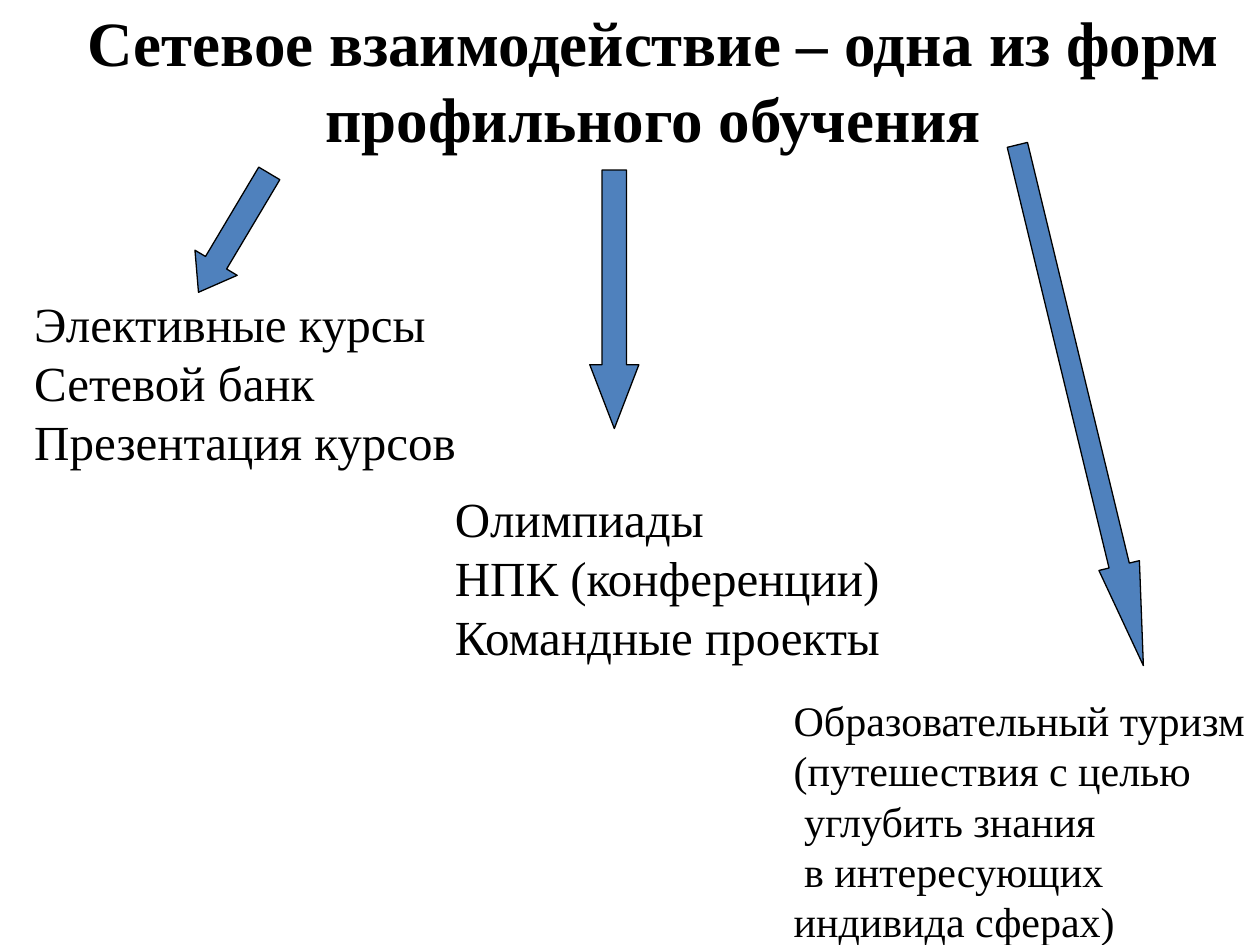
from lxml import etree
from pptx import Presentation
from pptx.dml.color import RGBColor
from pptx.enum.shapes import MSO_SHAPE
from pptx.enum.text import MSO_ANCHOR, MSO_AUTO_SIZE, PP_ALIGN
from pptx.oxml.ns import qn
from pptx.util import Cm, Pt

DOWN_ARROW = MSO_SHAPE.DOWN_ARROW
TOP = MSO_ANCHOR.TOP
FIT_SHAPE = MSO_AUTO_SIZE.SHAPE_TO_FIT_TEXT
LEFT, CENTER = PP_ALIGN.LEFT, PP_ALIGN.CENTER

FONT = "Times New Roman"
BLACK, BLUE = "000000", "4F81BD"
MARGINS = ("margin_left", "margin_top", "margin_right", "margin_bottom")

TITLE = "Сетевое взаимодействие – одна из форм профильного обучения"
COURSES = ["Элективные курсы", "Сетевой банк", "Презентация курсов"]
CONTESTS = ["Олимпиады", "НПК (конференции)", "Командные проекты"]
TOURISM = ["Образовательный туризм", "(путешествия с целью", "углубить знания",
           "в интересующих", "индивида сферах)"]
TOURISM_INDENTED = (2, 3)

# Boxes are left, top, width, height in centimetres
TITLE_BOX = (1.12, 0.08, 24.1, 3.07)
COURSES_BOX = (0.69, 5.92, 24.71, 11.43)
CONTESTS_BOX = (8.92, 9.73, 9.42, 3.84)
TOURISM_BOX = (15.75, 13.87, 9.7, 5.38)

# Box, rotation in degrees, head length relative to arrow width
ARROWS = [
    ((21.36, 2.77, 0.84, 10.8), 346.4, 2.47),
    ((11.89, 3.43, 0.99, 5.21), 0, 1.3),
    ((4.22, 3.3, 0.99, 2.79), 30.8, 0.7),
]


def color(hex_value):
    return RGBColor.from_string(hex_value)


def set_values(target, values):
    for name, value in values.items():
        setattr(target, name, value)


def place(shape, box):
    names = ("left", "top", "width", "height")
    set_values(shape, dict(zip(names, map(Cm, box))))


def write_lines(frame, lines, size, bold=False, align=LEFT, bullets_off=False):
    for index, line in enumerate(lines):
        para = frame.paragraphs[0] if index == 0 else frame.add_paragraph()
        if bullets_off:
            etree.SubElement(para._p.get_or_add_pPr(), qn("a:buNone"))
        set_values(para, {"alignment": align, "space_before": Pt(0)})
        span = para.add_run()
        span.text = line
        set_values(span.font, {"name": FONT, "size": Pt(size), "bold": bold})
        span.font.color.rgb = color(BLACK)


def fill_placeholder(shape, box, lines, size, **style):
    place(shape, box)
    frame = shape.text_frame
    set_values(frame, {"word_wrap": True, "vertical_anchor": TOP,
                       "auto_size": MSO_AUTO_SIZE.NONE})
    set_values(frame, dict.fromkeys(MARGINS, 0))
    write_lines(frame, lines, size, **style)


def add_note(page, box, lines, size, indented=()):
    frame = page.shapes.add_textbox(*map(Cm, box)).text_frame
    set_values(frame, {"word_wrap": False, "auto_size": FIT_SHAPE})
    write_lines(frame, lines, size)
    for index in indented:
        frame.paragraphs[index]._p.get_or_add_pPr().set("marL", str(Cm(0.21)))


def add_arrow(page, box, rotation, head):
    arrow = page.shapes.add_shape(DOWN_ARROW, *map(Cm, box))
    arrow.rotation = rotation
    arrow.adjustments[0] = 0.5
    arrow.adjustments[1] = head
    arrow.shadow.inherit = False
    arrow.fill.solid()
    arrow.fill.fore_color.rgb = color(BLUE)
    arrow.line.color.rgb = color(BLACK)
    arrow.line.width = Pt(0.75)


def main():
    deck = Presentation()
    set_values(deck, {"slide_width": Cm(25.4), "slide_height": Cm(19.05)})
    page = deck.slides.add_slide(deck.slide_layouts[1])

    # Title and list of courses
    fill_placeholder(page.shapes.title, TITLE_BOX, [TITLE], 36,
                     bold=True, align=CENTER)
    fill_placeholder(page.placeholders[1], COURSES_BOX, COURSES, 28,
                     bullets_off=True)

    # Arrows from the title to each form of learning
    for box, rotation, head in ARROWS:
        add_arrow(page, box, rotation, head)

    # Other forms of learning
    add_note(page, TOURISM_BOX, TOURISM, 24, TOURISM_INDENTED)
    add_note(page, CONTESTS_BOX, CONTESTS, 28)

    deck.save("out.pptx")


if __name__ == "__main__":
    main()
